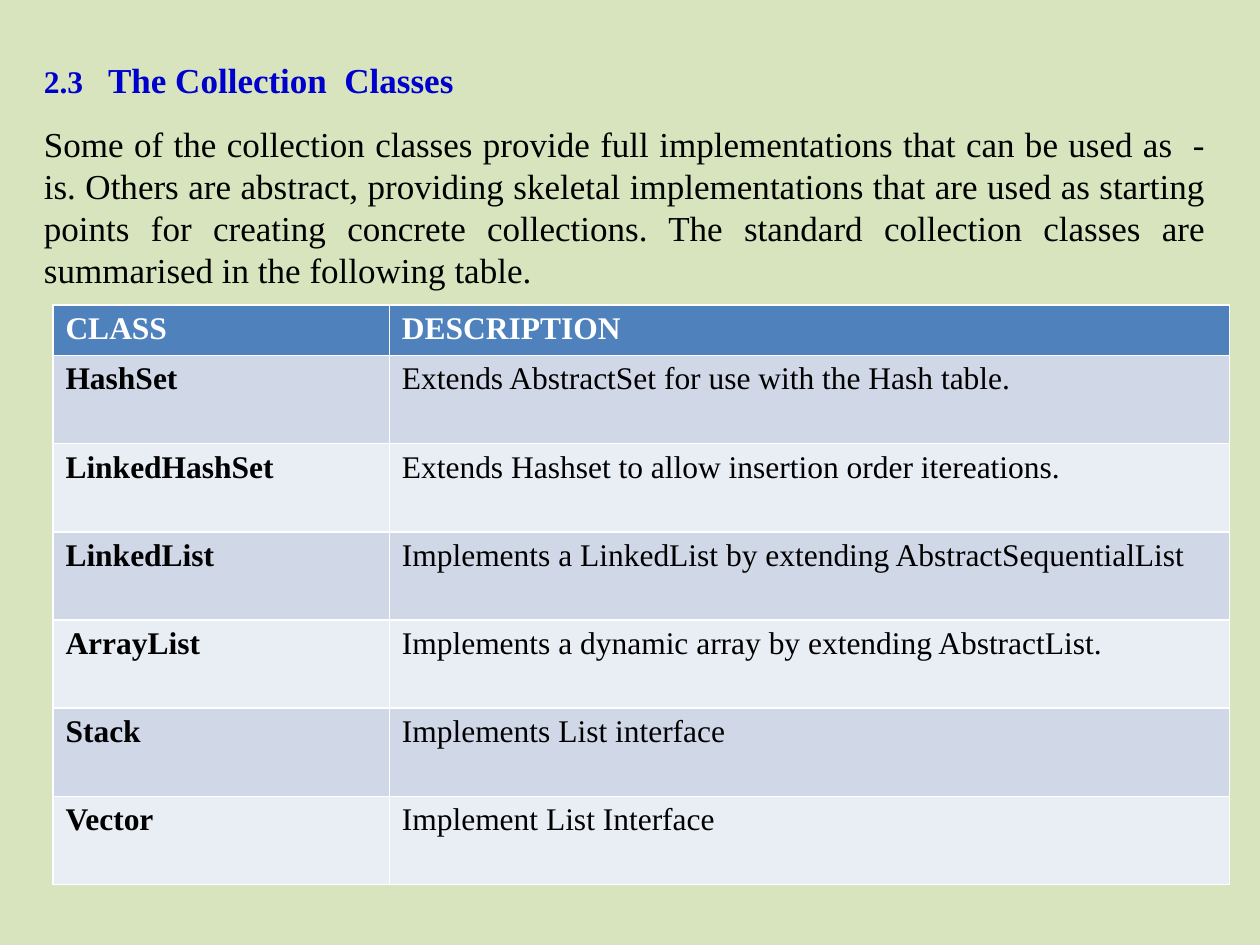
from pptx import Presentation
from pptx.dml.color import RGBColor
from pptx.enum.text import PP_ALIGN
from pptx.util import Inches, Pt

FONT = "Times New Roman"
BACKGROUND = RGBColor(0xD7, 0xE4, 0xBD)
HEADING = RGBColor(0x00, 0x00, 0xCC)
BLACK = RGBColor(0x00, 0x00, 0x00)
WHITE = RGBColor(0xFF, 0xFF, 0xFF)
HEADER_FILL = RGBColor(0x4F, 0x81, 0xBD)
BAND_FILLS = [RGBColor(0xE9, 0xED, 0xF4), RGBColor(0xD0, 0xD8, 0xE8)]

CLASSES = [
    ("CLASS", "DESCRIPTION"),
    ("HashSet", "Extends AbstractSet for use with the Hash table."),
    ("LinkedHashSet", "Extends Hashset to allow insertion order itereations."),
    ("LinkedList", "Implements a LinkedList by extending AbstractSequentialList"),
    ("ArrayList", "Implements a dynamic array by extending AbstractList."),
    ("Stack", "Implements List interface"),
    ("Vector", "Implement List Interface"),
]


def add_text(paragraph, text, size=18, color=BLACK, bold=False):
    run = paragraph.add_run()
    run.text = text
    run.font.name = FONT
    run.font.size = Pt(size)
    run.font.color.rgb = color
    run.font.bold = bold


def add_box(left, top, width, height):
    """Add a wrapping text box and return its first paragraph."""
    box = slide.shapes.add_textbox(Inches(left), Inches(top), Inches(width), Inches(height))
    box.text_frame.word_wrap = True
    return box.text_frame.paragraphs[0]


prs = Presentation()
prs.slide_width, prs.slide_height = Inches(10), Inches(7.5)
slide = prs.slides.add_slide(prs.slide_layouts[6])
slide.background.fill.solid()
slide.background.fill.fore_color.rgb = BACKGROUND

# Heading: the number hangs to the left of the title
heading = add_box(0.25, 0.25, 9.5, 0.56)
heading.line_spacing = 1.5
hanging = heading._p.get_or_add_pPr()
hanging.set("marL", str(Inches(0.51)))
hanging.set("indent", str(-Inches(0.51)))
add_text(heading, "2.3\t", color=HEADING, bold=True)
add_text(heading, "The Collection  Classes", size=20, color=HEADING, bold=True)

# Introduction
intro = add_box(0.25, 0.92, 9.42, 1.45)
intro.alignment = PP_ALIGN.JUSTIFY
add_text(
    intro,
    "Some of the collection classes provide full implementations that can be used as  - is. "
    "Others are abstract, providing skeletal implementations that are used as starting points "
    "for creating concrete collections. The standard collection classes are summarised in the "
    "following table.",
    size=20,
)

# Class table: the default table style supplies the white rules
table = slide.shapes.add_table(
    len(CLASSES), 2, Inches(0.42), Inches(2.42), Inches(9.34), Inches(4.6)
).table
table.columns[0].width = Inches(2.67)
table.columns[1].width = Inches(6.67)

for row, texts in enumerate(CLASSES):
    is_header = row == 0
    table.rows[row].height = Inches(0.4 if is_header else 0.7)
    for column, text in enumerate(texts):
        cell = table.cell(row, column)
        cell.fill.solid()
        cell.fill.fore_color.rgb = HEADER_FILL if is_header else BAND_FILLS[row % 2]
        add_text(
            cell.text_frame.paragraphs[0],
            text,
            color=WHITE if is_header else BLACK,
            bold=is_header or column == 0,
        )

prs.save("out.pptx")
